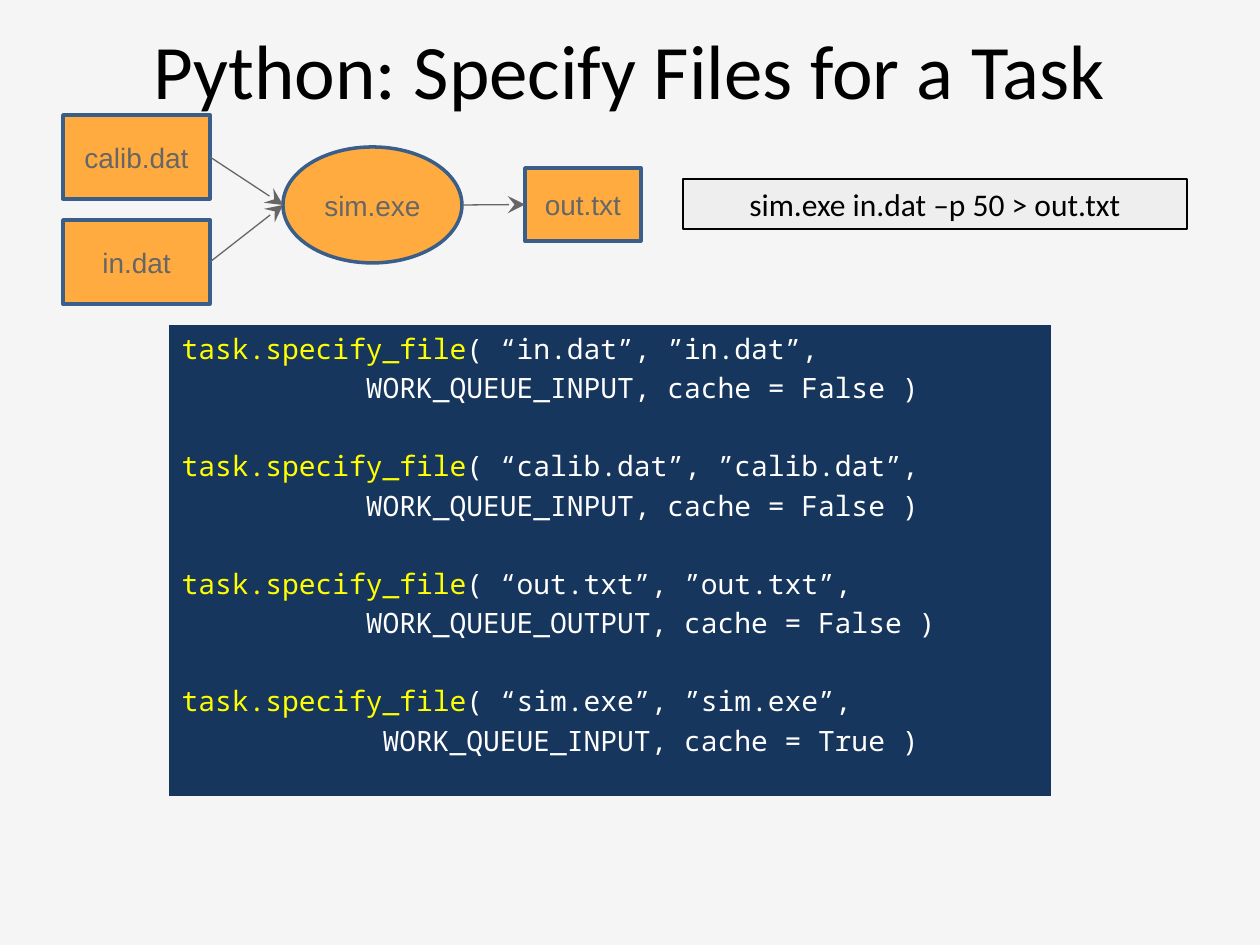
from dataclasses import dataclass

from lxml.etree import SubElement
from pptx import Presentation
from pptx.dml.color import RGBColor
from pptx.enum.shapes import MSO_CONNECTOR, MSO_SHAPE
from pptx.enum.text import MSO_ANCHOR, MSO_AUTO_SIZE, PP_ALIGN
from pptx.oxml.ns import qn
from pptx.util import Inches, Pt

PX_PER_INCH = 126


@dataclass(frozen=True)
class Theme:
    background: str = "F5F5F5"
    ink: str = "000000"
    node_fill: str = "FFAB40"
    node_line: str = "395E89"
    node_text: str = "666666"
    command_fill: str = "EEEEEE"
    code_fill: str = "17365D"
    code_text: str = "FFFFFF"
    code_call: str = "FFFF00"
    text_font: str = "Calibri"
    node_font: str = "Arial"
    code_font: str = "Noto Sans Mono"
    title_size: int = 44
    command_size: int = 18
    small_size: int = 16


def px(length):
    return Inches(length / PX_PER_INCH)


def add_text(paragraph, text, *, font, size, color, align=None):
    run = paragraph.add_run()
    run.text = text
    run.font.name = font
    run.font.size = Pt(size)
    run.font.color.rgb = RGBColor.from_string(color)
    if align is not None:
        paragraph.alignment = align


class SlideBuilder:
    def __init__(self, presentation, theme):
        self.theme = theme
        self.slide = presentation.slides.add_slide(presentation.slide_layouts[1])
        self.fill(self.slide.background, theme.background)

    def fill(self, target, color):
        target.fill.solid()
        target.fill.fore_color.rgb = RGBColor.from_string(color)

    def place(self, shape, left, top, width, height):
        shape.left, shape.top = px(left), px(top)
        shape.width, shape.height = px(width), px(height)

    def title(self, text, *box):
        shape = self.slide.shapes.title
        self.place(shape, *box)
        shape.text_frame.auto_size = MSO_AUTO_SIZE.NONE
        shape.text_frame.vertical_anchor = MSO_ANCHOR.MIDDLE
        add_text(shape.text_frame.paragraphs[0], text, font=self.theme.text_font,
                 size=self.theme.title_size, color=self.theme.ink, align=PP_ALIGN.CENTER)

    def code(self, calls, *box):
        theme = self.theme
        shape = self.slide.placeholders[1]
        self.place(shape, *box)
        self.fill(shape, theme.code_fill)
        frame = shape.text_frame
        frame.auto_size = MSO_AUTO_SIZE.NONE
        frame.vertical_anchor = MSO_ANCHOR.TOP
        style = {"font": theme.code_font, "size": theme.small_size}
        for index, (function, arguments, options) in enumerate(calls):
            first = frame.add_paragraph() if index else frame.paragraphs[0]
            second = frame.add_paragraph()
            for paragraph, space in ((first, 25.6 if index else 0), (second, 3.2)):
                properties = paragraph._p.get_or_add_pPr()
                properties.set("marL", str(px(48)))
                properties.set("indent", str(-px(48)))
                SubElement(properties, qn("a:buNone"))
                paragraph.space_before = Pt(space)
            add_text(first, function, color=theme.code_call, **style)
            add_text(first, arguments, color=theme.code_text, **style)
            add_text(second, options, color=theme.code_text, **style)

    def box(self, kind, text, *box, fill, line, weight, anchor=MSO_ANCHOR.MIDDLE, **style):
        shape = self.slide.shapes.add_shape(kind, 0, 0, 0, 0)
        self.place(shape, *box)
        shape.shadow.inherit = False
        self.fill(shape, fill)
        shape.line.color.rgb = RGBColor.from_string(line)
        shape.line.width = Pt(weight)
        shape.text_frame.word_wrap = True
        shape.text_frame.vertical_anchor = anchor
        add_text(shape.text_frame.paragraphs[0], text, align=PP_ALIGN.CENTER, **style)
        return shape

    def node(self, text, *box, kind=MSO_SHAPE.RECTANGLE):
        theme = self.theme
        return self.box(kind, text, *box, fill=theme.node_fill, line=theme.node_line, weight=2,
                        font=theme.node_font, size=theme.small_size, color=theme.node_text)

    def command(self, text, *box):
        theme = self.theme
        self.box(MSO_SHAPE.RECTANGLE, text, *box, fill=theme.command_fill, line=theme.ink,
                 weight=0.75, anchor=MSO_ANCHOR.TOP, font=theme.text_font,
                 size=theme.command_size, color=theme.ink)

    def arrow(self, source, target):
        """Join the right middle of source to the left middle of target."""
        connector = self.slide.shapes.add_connector(
            MSO_CONNECTOR.STRAIGHT,
            source.left + source.width, source.top + source.height // 2,
            target.left, target.top + target.height // 2)
        connector.line.color.rgb = RGBColor.from_string(self.theme.node_text)
        connector.line.width = Pt(0.75)
        SubElement(connector.line._get_or_add_ln(), qn("a:tailEnd"),
                   type="stealth", w="lg", len="lg")
        SubElement(connector._element.spPr, qn("a:effectLst"))


def main():
    presentation = Presentation()
    presentation.slide_width, presentation.slide_height = px(1260), px(945)
    builder = SlideBuilder(presentation, Theme())

    # Title and code
    builder.title("Python: Specify Files for a Task", 63, -10, 1134, 158)
    call = "task.specify_file"
    builder.code([
        (call, "( “in.dat”, ”in.dat”,", "           WORK_QUEUE_INPUT, cache = False )"),
        (call, "( “calib.dat”, ”calib.dat”,", "           WORK_QUEUE_INPUT, cache = False )"),
        (call, "( “out.txt”, ”out.txt”,", "           WORK_QUEUE_OUTPUT, cache = False )"),
        (call, "( “sim.exe”, ”sim.exe”,", "            WORK_QUEUE_INPUT, cache = True )"),
    ], 169, 325, 882, 471)

    # Data flow: inputs, program, output
    program = builder.node("sim.exe", 283, 147, 179, 116, kind=MSO_SHAPE.OVAL)
    inputs = [builder.node(name, 63, 115 + 105 * row, 147, 84)
              for row, name in enumerate(("calib.dat", "in.dat"))]
    output = builder.node("out.txt", 525, 168, 116, 73)
    for source in inputs:
        builder.arrow(source, program)
    builder.arrow(program, output)

    # Command line
    builder.command("sim.exe in.dat –p 50 > out.txt", 683, 179, 504, 50)

    presentation.save("out.pptx")


if __name__ == "__main__":
    main()
